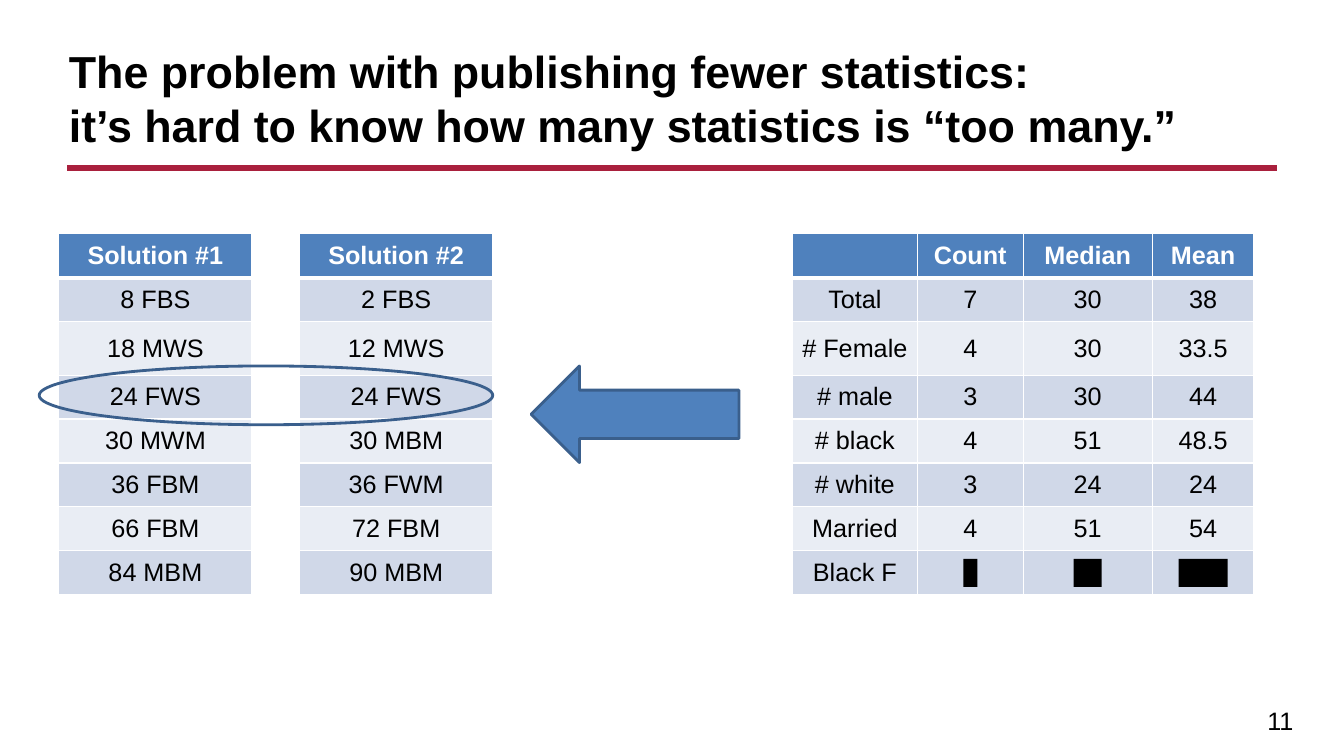
import pptx
import pptx.dml.color
import pptx.enum.shapes
import pptx.enum.text
import pptx.oxml
import pptx.oxml.ns
import pptx.util

Pt = pptx.util.Pt
MIDDLE = pptx.enum.text.MSO_ANCHOR.MIDDLE
ALIGN = pptx.enum.text.PP_ALIGN
SHAPES = pptx.enum.shapes.MSO_SHAPE
NAMESPACE = pptx.oxml.ns.nsdecls("a")

BLACK, WHITE = "000000", "FFFFFF"
BLUE, OUTLINE, RED = "4F81BD", "3A5F8C", "A9203D"
BAND_FILLS = ["E9EDF4", "D0D8E8"]
TABLE_TOP = 167
ROW_HEIGHTS = [31.4, 31.4, 38.2] + [31.4] * 5
BAR_WIDTHS = [10, 20, 35]
BAR_HEIGHT = 20


def color(hex_string):
    return pptx.dml.color.RGBColor.from_string(hex_string)


def format_paragraph(paragraph, size, text_color, alignment, bold=False):
    paragraph.alignment = alignment
    for run in paragraph.runs:
        run.font.size = Pt(size)
        run.font.bold = bold
        run.font.color.rgb = color(text_color)
        run.font.name = "Arial"


presentation = pptx.Presentation()
presentation.slide_width = Pt(960)
presentation.slide_height = Pt(540)
slide = presentation.slides.add_slide(presentation.slide_layouts[5])

# Title and rule
title = slide.shapes.title
title.left, title.top, title.width, title.height = Pt(42), Pt(21.6), Pt(870), Pt(90)
title.text_frame.text = (
    "The problem with publishing fewer statistics:\v"
    "it’s hard to know how many statistics is “too many.”"
)
title.text_frame.vertical_anchor = pptx.enum.text.MSO_ANCHOR.BOTTOM
title.text_frame.word_wrap = True
title.text_frame.auto_size = pptx.enum.text.MSO_AUTO_SIZE.NONE
format_paragraph(title.text_frame.paragraphs[0], 32, BLACK, ALIGN.LEFT, bold=True)

rule = slide.shapes.add_connector(
    pptx.enum.shapes.MSO_CONNECTOR.STRAIGHT, Pt(48), Pt(120), Pt(912), Pt(120)
)
rule.line.color.rgb = color(RED)
rule.line.width = Pt(4.5)
rule._element.spPr.append(pptx.oxml.parse_xml(f"<a:effectLst {NAMESPACE}/>"))

# Page number
page_number = slide.shapes.add_textbox(Pt(727), Pt(500.4), Pt(204), Pt(28))
page_number.text_frame.word_wrap = True
page_number.text_frame.text = "11"
format_paragraph(page_number.text_frame.paragraphs[0], 18, BLACK, ALIGN.RIGHT)

# Arrow from the statistics to the solutions
arrow = slide.shapes.add_shape(SHAPES.RIGHT_ARROW, Pt(379.4), Pt(261.4), Pt(148.4), Pt(69))
arrow.rotation = 180
arrow.fill.solid()
arrow.fill.fore_color.rgb = color(BLUE)

# Tables: left edge, column widths, rows
tables = [
    (42, [138], [["Solution #1"], ["8 FBS"], ["18 MWS"], ["24 FWS"],
                 ["30 MWM"], ["36 FBM"], ["66 FBM"], ["84 MBM"]]),
    (214, [138], [["Solution #2"], ["2 FBS"], ["12 MWS"], ["24 FWS"],
                  ["30 MBM"], ["36 FWM"], ["72 FBM"], ["90 MBM"]]),
    (566, [89.3, 75.6, 92.2, 72.7], [
        ["", "Count", "Median", "Mean"],
        ["Total", "7", "30", "38"],
        ["# Female", "4", "30", "33.5"],
        ["# male", "3", "30", "44"],
        ["# black", "4", "51", "48.5"],
        ["# white", "3", "24", "24"],
        ["Married", "4", "51", "54"],
        ["Black F", "", "", ""],
    ]),
]
for left, column_widths, rows in tables:
    table = slide.shapes.add_table(
        len(rows), len(column_widths), Pt(left), Pt(TABLE_TOP),
        Pt(sum(column_widths)), Pt(sum(ROW_HEIGHTS)),
    ).table
    for column, width in zip(table.columns, column_widths):
        column.width = Pt(width)
    for row_index, values in enumerate(rows):
        table.rows[row_index].height = Pt(ROW_HEIGHTS[row_index])
        is_header = row_index == 0
        for column_index, value in enumerate(values):
            cell = table.cell(row_index, column_index)
            cell.text_frame.text = value
            cell.vertical_anchor = MIDDLE
            cell.margin_left = cell.margin_right = Pt(4)
            format_paragraph(
                cell.text_frame.paragraphs[0], 18,
                WHITE if is_header else BLACK, ALIGN.CENTER, bold=is_header,
            )
            border_widths = {
                "lnL": 1, "lnR": 1,
                "lnT": 3 if row_index == 1 else 1,
                "lnB": 3 if is_header else 1,
            }
            for side, width in border_widths.items():
                cell._tc.get_or_add_tcPr().append(pptx.oxml.parse_xml(
                    f'<a:{side} {NAMESPACE} w="{Pt(width)}"><a:solidFill>'
                    f'<a:srgbClr val="{WHITE}"/></a:solidFill></a:{side}>'
                ))
            cell.fill.solid()
            cell.fill.fore_color.rgb = color(BLUE if is_header else BAND_FILLS[row_index % 2])

# Black bars centred in the last row of the statistics table
statistics_left, statistics_widths, _ = tables[-1]
bar_top = TABLE_TOP + sum(ROW_HEIGHTS) - (ROW_HEIGHTS[-1] + BAR_HEIGHT) / 2
for column_index, bar_width in enumerate(BAR_WIDTHS, start=1):
    cell_left = statistics_left + sum(statistics_widths[:column_index])
    bar_left = cell_left + (statistics_widths[column_index] - bar_width) / 2
    bar = slide.shapes.add_shape(
        SHAPES.RECTANGLE, Pt(bar_left), Pt(bar_top), Pt(bar_width), Pt(BAR_HEIGHT)
    )
    bar.shadow.inherit = False
    bar.fill.solid()
    bar.fill.fore_color.rgb = color(BLACK)
    bar.line.fill.background()

# Ring around the row shared by both solutions
ring = slide.shapes.add_shape(SHAPES.OVAL, Pt(28), Pt(261.4), Pt(324), Pt(42))
ring.fill.background()
for shape in (arrow, ring):
    shape.shadow.inherit = False
    shape.line.color.rgb = color(OUTLINE)
    shape.line.width = Pt(2)

presentation.save("out.pptx")
